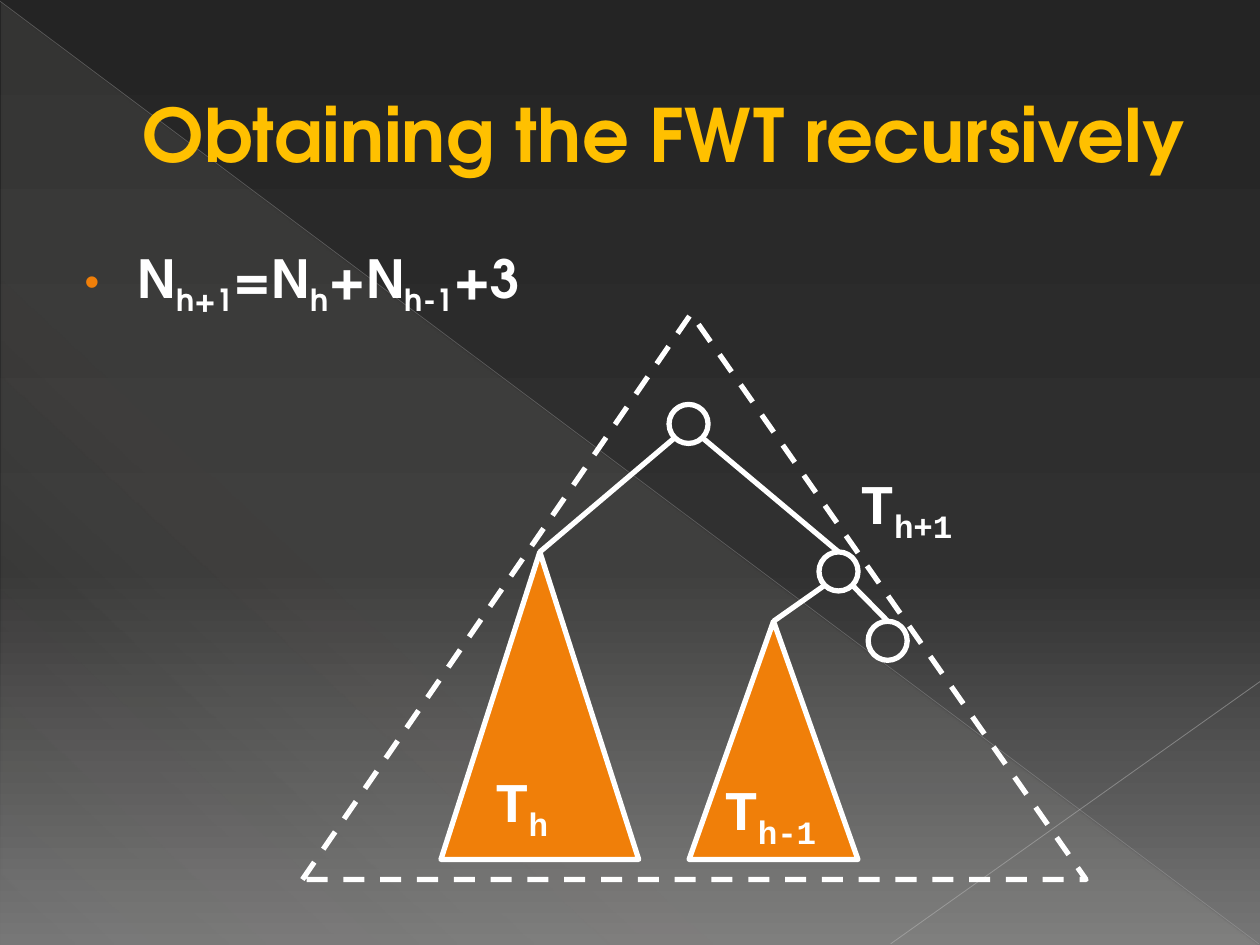
from dataclasses import dataclass

from lxml import etree
from pptx import Presentation
from pptx import util as u
from pptx.dml.color import RGBColor
from pptx.enum import dml, shapes, text
from pptx.oxml import ns


@dataclass(frozen=True)
class Theme:
    """Colours, fonts and sizes used on the slide."""
    white: str = "FFFFFF"
    gold: str = "FFC000"
    orange: str = "F07F09"
    outline: str = "A65806"
    sand: str = "E3DED1"
    heading_font: str = "TeX Gyre Adventor"
    label_font: str = "Courier New"
    title_size: float = 42
    body_size: float = 30
    label_size: float = 32
    stroke: float = 3
    node_size: float = 22.32


THEME = Theme()


def child(parent, tag, **attributes):
    """Append a DrawingML element to a parent."""
    values = {name: str(value) for name, value in attributes.items()}
    return etree.SubElement(parent, ns.qn(tag), values)


def add_colour(parent, colour, opacity=100):
    """Append an RGB colour with an opacity in percent."""
    node = child(parent, "a:srgbClr", val=colour)
    if opacity < 100:
        child(node, "a:alpha", val=opacity * 1000)


def set_gradient(fill, owner, stops, angle):
    """Fill with a linear gradient of (position, colour, opacity) stops."""
    fill.gradient()
    gradient = next(owner.iter(ns.qn("a:gradFill")))
    for part in list(gradient):
        gradient.remove(part)
    stop_list = child(gradient, "a:gsLst")
    for position, colour, opacity in stops:
        add_colour(child(stop_list, "a:gs", pos=position * 1000), colour, opacity)
    child(gradient, "a:lin", ang=angle * 60000, scaled=0)


def place(shape, left, top, width, height):
    """Position a shape in points."""
    shape.left, shape.top = u.Pt(left), u.Pt(top)
    shape.width, shape.height = u.Pt(width), u.Pt(height)


def style_line(line, colour=THEME.white, width=THEME.stroke):
    """Give a line its colour and width."""
    line.color.rgb = RGBColor.from_string(colour)
    line.width = u.Pt(width)


def style_span(span, font, size, colour):
    """Format a bold run."""
    span.font.name, span.font.size, span.font.bold = font, u.Pt(size), True
    span.font.color.rgb = RGBColor.from_string(colour)


def write_formula(para, parts, font, size):
    """Write parts that alternate between base line and subscript."""
    for index, part in enumerate(parts):
        span = para.add_run()
        span.text = part
        style_span(span, font, size, THEME.white)
        if index % 2:
            span._r.get_or_add_rPr().set("baseline", "-25000")


def add_shape(slide, kind, box, fill=None):
    """Add a white-outlined preset shape."""
    shape = slide.shapes.add_shape(kind, *map(u.Pt, box))
    shape.shadow.inherit = False
    if fill:
        shape.fill.solid()
        shape.fill.fore_color.rgb = RGBColor.from_string(fill)
    else:
        shape.fill.background()
    style_line(shape.line)
    return shape


def add_node(slide, left, top):
    """Add a round tree node."""
    box = (left, top, THEME.node_size, THEME.node_size)
    return add_shape(slide, shapes.MSO_SHAPE.OVAL, box)


def add_line(slide, start, end):
    """Add a straight line without shadow."""
    points = map(u.Pt, (*start, *end))
    line = slide.shapes.add_connector(shapes.MSO_CONNECTOR.STRAIGHT, *points)
    style_line(line.line)
    child(line._element.spPr, "a:effectLst")
    return line


def add_edge(slide, parent, target, side):
    """Join a node's lower left (-1) or lower right (1) to the top of a target."""
    radius = parent.width.pt / 2
    reach = radius * 0.5 ** 0.5
    start = (parent.left.pt + radius + side * reach,
             parent.top.pt + radius + reach)
    add_line(slide, start, start).end_connect(target, 0)


def add_label(slide, left, top, width, subscript):
    """Add a tree name with its subscript."""
    box = slide.shapes.add_textbox(*map(u.Pt, (left, top, width, 46.1)))
    box.text_frame.word_wrap = False
    box.text_frame.auto_size = text.MSO_AUTO_SIZE.SHAPE_TO_FIT_TEXT
    write_formula(box.text_frame.paragraphs[0], ("T", subscript),
                  THEME.label_font, THEME.label_size)


def add_backdrop(slide):
    """Draw the background gradient, the pale wedge and the thin diagonals."""
    fill = slide.background.fill
    stops = ((0, "242424", 100), (60, "303030", 100), (100, "767676", 100))
    set_gradient(fill, slide._element, stops, 90)
    wedge = add_shape(slide, shapes.MSO_SHAPE.RIGHT_TRIANGLE, (0.7, 1.4, 718.6, 538.6))
    wedge.line.fill.background()
    stops = ((0, THEME.sand, 10), (70, THEME.sand, 8), (100, THEME.sand, 1))
    set_gradient(wedge.fill, wedge._element, stops, 133)
    diagonals = (((0, 0.7), (719.3, 539.3), "B6B6B6", 0.39, 35),
                 ((720, 389.5), (509, 539.3), "BFBFBF", 0.47, 45))
    for start, end, colour, width, opacity in diagonals:
        line = add_line(slide, start, end)
        style_line(line.line, colour, width)
        tint = next(line._element.iter(ns.qn("a:srgbClr")))
        child(tint, "a:alpha", val=opacity * 1000)


def fill_title(title):
    """Write the outlined title."""
    place(title, 36, 20.9, 648, 110.2)
    title.text_frame.text = "Obtaining the FWT recursively"
    title.text_frame.vertical_anchor = text.MSO_ANCHOR.MIDDLE
    title.text_frame.margin_right = 0
    para = title.text_frame.paragraphs[0]
    para.alignment = text.PP_ALIGN.LEFT
    para._p.get_or_add_pPr().set("marL", str(u.Pt(38.2)))
    span = para.runs[0]
    style_span(span, THEME.heading_font, THEME.title_size, THEME.gold)
    outline = child(span._r.rPr, "a:ln", w=u.Pt(0.5))
    add_colour(child(outline, "a:solidFill"), THEME.outline)
    span._r.rPr.insert(0, outline)


def fill_body(body):
    """Write the recurrence as a bulleted line."""
    place(body, 36, 136.8, 648, 360)
    para = body.text_frame.paragraphs[0]
    write_formula(para, ("N", "h+1", "=N", "h", "+N", "h-1", "+3"),
                  THEME.heading_font, THEME.body_size)
    props = para._p.get_or_add_pPr()
    props.set("marL", str(u.Pt(35.3)))
    props.set("indent", str(u.Pt(-30.2)))
    child(child(props, "a:spcBef"), "a:spcPct", val=20000)
    add_colour(child(props, "a:buClr"), THEME.orange)
    child(props, "a:buSzPct", val=80000)
    child(props, "a:buChar", char="•")


def add_tree(slide):
    """Draw the tree with its two subtrees inside the dashed triangle."""
    triangle = shapes.MSO_SHAPE.ISOSCELES_TRIANGLE
    root = add_node(slide, 382.3, 231.1)
    right = add_node(slide, 468, 315.4)
    leaf = add_node(slide, 496.1, 355)
    tall = add_shape(slide, triangle, (252, 315.4, 113, 175.7), THEME.orange)
    short = add_shape(slide, triangle, (393.8, 355, 96.5, 136.1), THEME.orange)
    for parent, target, side in ((root, tall, -1), (root, right, 1),
                                 (right, short, -1), (right, leaf, 1)):
        add_edge(slide, parent, target, side)
    whole = add_shape(slide, triangle, (172.8, 179.3, 447.8, 323.3))
    whole.adjustments[0] = 0.496
    whole.line.dash_style = dml.MSO_LINE.DASH
    add_label(slide, 275.8, 434.2, 46.8, "h")
    add_label(slide, 406.8, 439.2, 72.7, "h-1")
    add_label(slide, 484.6, 264.2, 72.7, "h+1")


def main():
    """Build and save the deck."""
    deck = Presentation()
    deck.slide_width, deck.slide_height = u.Pt(720), u.Pt(540)
    slide = deck.slides.add_slide(deck.slide_layouts[1])
    title, body = slide.placeholders
    add_backdrop(slide)
    for holder in (title, body):
        slide.shapes._spTree.append(holder._element)
    fill_title(title)
    fill_body(body)
    add_tree(slide)
    deck.save("out.pptx")


if __name__ == "__main__":
    main()
